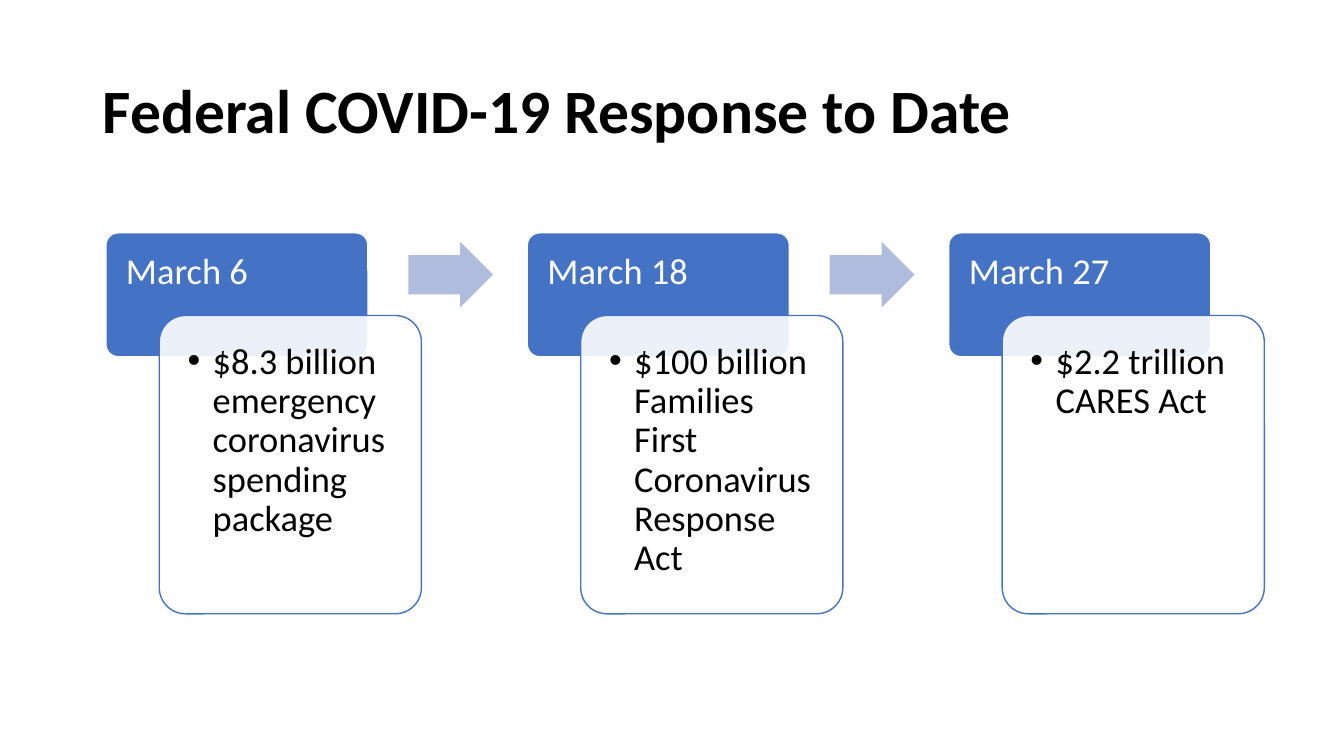
from dataclasses import dataclass

from lxml import etree
from pptx import Presentation
from pptx.dml.color import RGBColor
from pptx.enum.shapes import MSO_SHAPE
from pptx.enum.text import MSO_ANCHOR
from pptx.oxml.ns import qn
from pptx.util import Inches, Pt

ROUNDED = MSO_SHAPE.ROUNDED_RECTANGLE
RIGHT_ARROW = MSO_SHAPE.RIGHT_ARROW
TOP = MSO_ANCHOR.TOP
MIDDLE = MSO_ANCHOR.MIDDLE


@dataclass(frozen=True)
class Theme:
    """Colours, font and type sizes of the slide."""
    font: str = "Calibri"
    title_size: int = 44
    body_size: int = 26
    black: str = "000000"
    white: str = "FFFFFF"
    blue: str = "4472C4"
    pale_blue: str = "B0BCDE"


THEME = Theme()
STEP_LEFT = 1.05
STEP_PITCH = 4.18
STEPS = [
    ("March 6", "$8.3 billion emergency coronavirus spending package"),
    ("March 18", "$100 billion Families First Coronavirus Response Act"),
    ("March 27", "$2.2 trillion CARES Act"),
]


def add_panel(slide, kind, box, fill, line=None, adjustments=(0.1,), opacity=None):
    """Add a filled preset shape, outlined when a line colour is given."""
    panel = slide.shapes.add_shape(kind, *map(Inches, box))
    panel.shadow.inherit = False
    for index, value in enumerate(adjustments):
        panel.adjustments[index] = value
    panel.fill.solid()
    panel.fill.fore_color.rgb = RGBColor.from_string(fill)
    if opacity is not None:
        colour = panel.fill._xPr.find(qn("a:solidFill"))[0]
        etree.SubElement(colour, qn("a:alpha"), val=str(opacity * 1000))
    if line is None:
        panel.line.fill.background()
    else:
        panel.line.color.rgb = RGBColor.from_string(line)
        panel.line.width = Pt(1)


def add_bullet(paragraph):
    """Give a paragraph a hanging round bullet."""
    paragraph.level = 1
    properties = paragraph._p.get_or_add_pPr()
    properties.set("marL", str(Inches(0.25)))
    properties.set("indent", str(Inches(-0.25)))
    etree.SubElement(properties, qn("a:buFont"), typeface="Arial")
    etree.SubElement(properties, qn("a:buChar"), char="•")


def add_text(slide, box, text, size, colour, insets, anchor=TOP, bold=False, bullet=False):
    """Add a wrapped text box holding one paragraph."""
    frame = slide.shapes.add_textbox(*map(Inches, box)).text_frame
    frame.word_wrap = True
    frame.vertical_anchor = anchor
    (frame.margin_left, frame.margin_top,
     frame.margin_right, frame.margin_bottom) = map(Inches, insets)
    paragraph = frame.paragraphs[0]
    if bullet:
        add_bullet(paragraph)
    paragraph.line_spacing = 0.9
    run = paragraph.add_run()
    run.text = text
    run.font.name = THEME.font
    run.font.size = Pt(size)
    run.font.bold = bold
    run.font.color.rgb = RGBColor.from_string(colour)


def add_step(slide, left, date, measure):
    """Add a date tab with its overlapping measure card."""
    add_panel(slide, ROUNDED, (left, 2.31, 2.6, 1.23), THEME.blue, THEME.white)
    add_text(slide, (left, 2.31, 2.6, 0.82), date, THEME.body_size, THEME.white,
             (0.2, 0.2, 0.2, 0.11))
    add_panel(slide, ROUNDED, (left + 0.53, 3.13, 2.6, 2.96), THEME.white, THEME.blue,
              opacity=90)
    add_text(slide, (left + 0.61, 3.2, 2.45, 2.81), measure, THEME.body_size, THEME.black,
             (0.2, 0.2, 0.2, 0.2), bullet=True)


def main():
    """Build the federal response timeline and save it."""
    presentation = Presentation()
    presentation.slide_width = Inches(13.33)
    presentation.slide_height = Inches(7.5)
    slide = presentation.slides.add_slide(presentation.slide_layouts[6])
    add_text(slide, (0.92, 0.4, 11.5, 1.45), "Federal COVID-19 Response to Date",
             THEME.title_size, THEME.black, (0.1, 0.05, 0.1, 0.05), MIDDLE, bold=True)
    for index, (date, measure) in enumerate(STEPS):
        left = STEP_LEFT + index * STEP_PITCH
        add_step(slide, left, date, measure)
        if index < len(STEPS) - 1:
            add_panel(slide, RIGHT_ARROW, (left + 3, 2.4, 0.84, 0.65), THEME.pale_blue,
                      adjustments=(0.6, 0.5))
    presentation.save("out.pptx")


if __name__ == "__main__":
    main()
